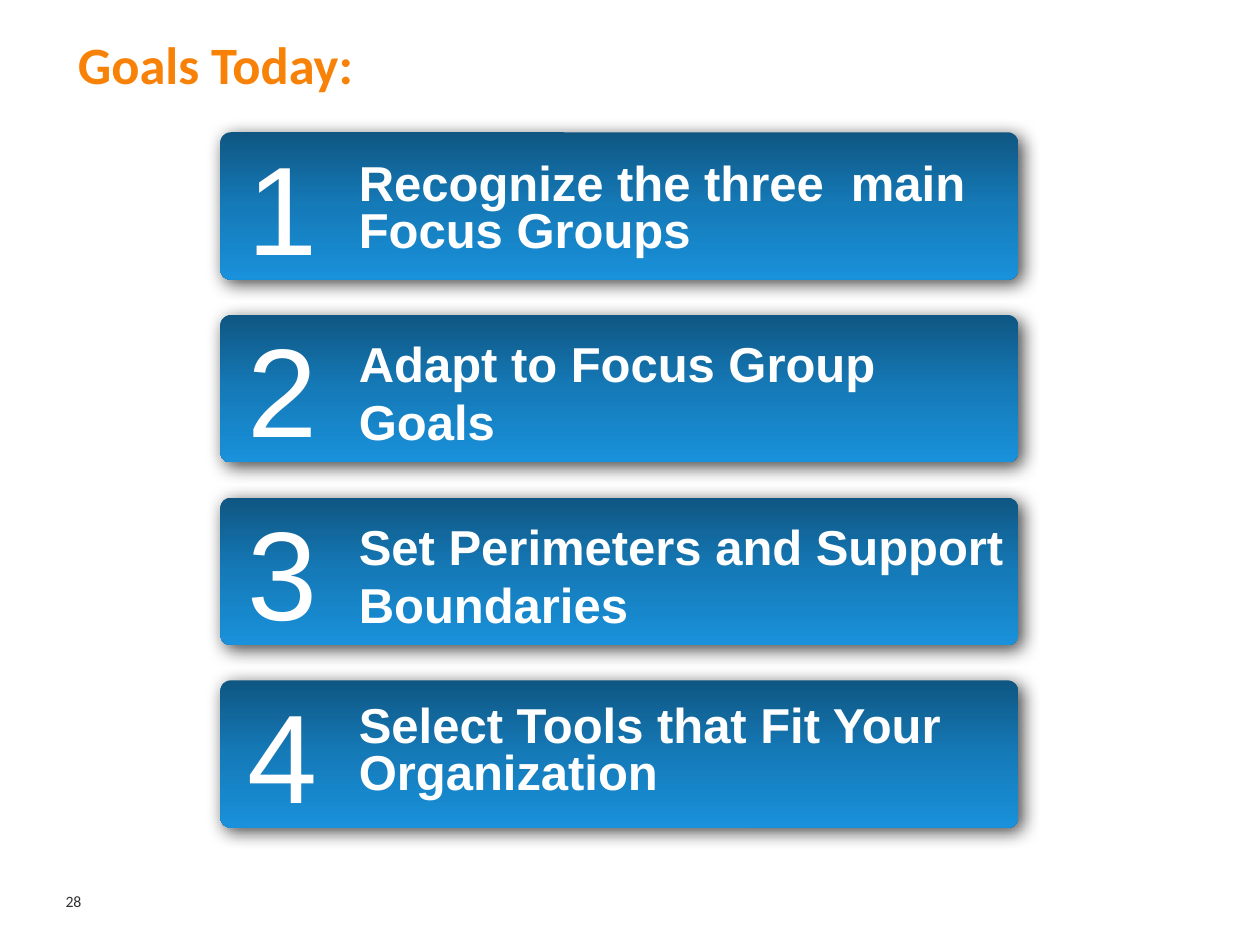
from dataclasses import dataclass

import lxml.etree
import pptx
import pptx.dml.color
import pptx.enum.shapes
import pptx.enum.text
import pptx.oxml.ns
import pptx.util

# Grid of 40 columns by 30 rows on the slide
SLIDE_WIDTH, SLIDE_HEIGHT = pptx.util.Inches(10), pptx.util.Inches(7.5)
COLUMNS, ROWS = 40, 30

WHITE, ORANGE, DARK_GREY = "FFFFFF", "F88208", "312F31"
PANEL_STOPS = [(0, "0F5682"), (50, "157AB8"), (100, "1991DB")]
FIRST_ROW, ROW_STEP = 4.2, 5.8


@dataclass
class Area:
    column: float
    row: float
    columns: float
    rows: float

    def lengths(self) -> tuple[int, int, int, int]:
        across, down = SLIDE_WIDTH / COLUMNS, SLIDE_HEIGHT / ROWS
        return (round(self.column * across), round(self.row * down),
                round(self.columns * across), round(self.rows * down))


@dataclass
class Style:
    font: str
    size: float
    colour: str
    bold: bool = False
    line_spacing: float = 1.0
    space_after: float = 0


@dataclass
class Goal:
    lines: list[str]
    text_offset: float = 0.76


TITLE = Style("Calibri", 30, ORANGE, True, 0.75)
PAGE_NUMBER = Style("Calibri", 9, DARK_GREY)
GOAL_TEXT = Style("Arial", 28, WHITE, True, 0.8, 6)
GOAL_NUMBER = Style("Arial", 72, WHITE, space_after=6)

GOALS = [
    Goal(["Recognize the three  main Focus Groups"], 0.8),
    Goal(["Adapt to Focus Group", "Goals"]),
    Goal(["Set Perimeters and Support", "Boundaries"]),
    Goal(["Select Tools that Fit Your Organization"], 0.6),
]


def rgb(colour: str) -> pptx.dml.color.RGBColor:
    return pptx.dml.color.RGBColor.from_string(colour)


def add_child(parent, tag: str, **attributes):
    child = lxml.etree.SubElement(parent, pptx.oxml.ns.qn(tag))
    for name, value in attributes.items():
        child.set(name, str(value))
    return child


def add_text(page, area: Area, lines: list[str], style: Style):
    box = page.shapes.add_textbox(*area.lengths())
    frame = box.text_frame
    frame.word_wrap = True
    frame.text = "\n".join(lines)
    for para in frame.paragraphs:
        para.line_spacing = style.line_spacing
        para.space_after = pptx.util.Pt(style.space_after)
        for span in para.runs:
            span.font.name = style.font
            span.font.size = pptx.util.Pt(style.size)
            span.font.bold = style.bold
            span.font.color.rgb = rgb(style.colour)
    return box


def add_panel(page, area: Area) -> None:
    panel = page.shapes.add_shape(
        pptx.enum.shapes.MSO_SHAPE.ROUNDED_RECTANGLE, *area.lengths())
    panel.adjustments[0] = 0.07
    panel.line.fill.background()

    # Three-stop gradient, dark at the top
    panel.fill.gradient()
    panel.fill.gradient_angle = 270
    properties = panel.element.spPr
    stops = properties.find(".//" + pptx.oxml.ns.qn("a:gsLst"))
    for stop in list(stops):
        stops.remove(stop)
    for percent, colour in PANEL_STOPS:
        stop = add_child(stops, "a:gs", pos=percent * 1000)
        add_child(stop, "a:srgbClr", val=colour)

    # Soft shadow to the lower right
    panel.shadow.inherit = False
    effects = properties.find(pptx.oxml.ns.qn("a:effectLst"))
    shadow = add_child(effects, "a:outerShdw", blurRad=pptx.util.Pt(10),
                       dist=pptx.util.Pt(3), dir=45 * 60000,
                       algn="ctr", rotWithShape=0)
    add_child(add_child(shadow, "a:srgbClr", val="000000"),
              "a:alpha", val=70000)


def add_goal(page, index: int, goal: Goal) -> None:
    row = FIRST_ROW + index * ROW_STEP
    add_panel(page, Area(7, row, 25.32, 4.68))
    add_text(page, Area(11, row + goal.text_offset, 22.6, 3.6),
             goal.lines, GOAL_TEXT)
    add_text(page, Area(7.48, row - 0.3, 3.2, 5.24),
             [str(index + 1)], GOAL_NUMBER)


def main() -> None:
    deck = pptx.Presentation()
    deck.slide_width, deck.slide_height = SLIDE_WIDTH, SLIDE_HEIGHT
    page = deck.slides.add_slide(deck.slide_layouts[6])

    # Page number
    number = add_text(page, Area(2.08, 27.8, 3.4, 1.6), ["28"], PAGE_NUMBER)
    number.text_frame.margin_left = number.text_frame.margin_right = 0
    number.text_frame.vertical_anchor = pptx.enum.text.MSO_ANCHOR.MIDDLE

    # Title
    title = add_text(page, Area(2.08, 1.28, 36.08, 3.4),
                     ["Goals Today:"], TITLE)
    title.text_frame.margin_bottom = 0

    # Numbered goals
    for index, goal in enumerate(GOALS):
        add_goal(page, index, goal)

    deck.save("out.pptx")


if __name__ == "__main__":
    main()
